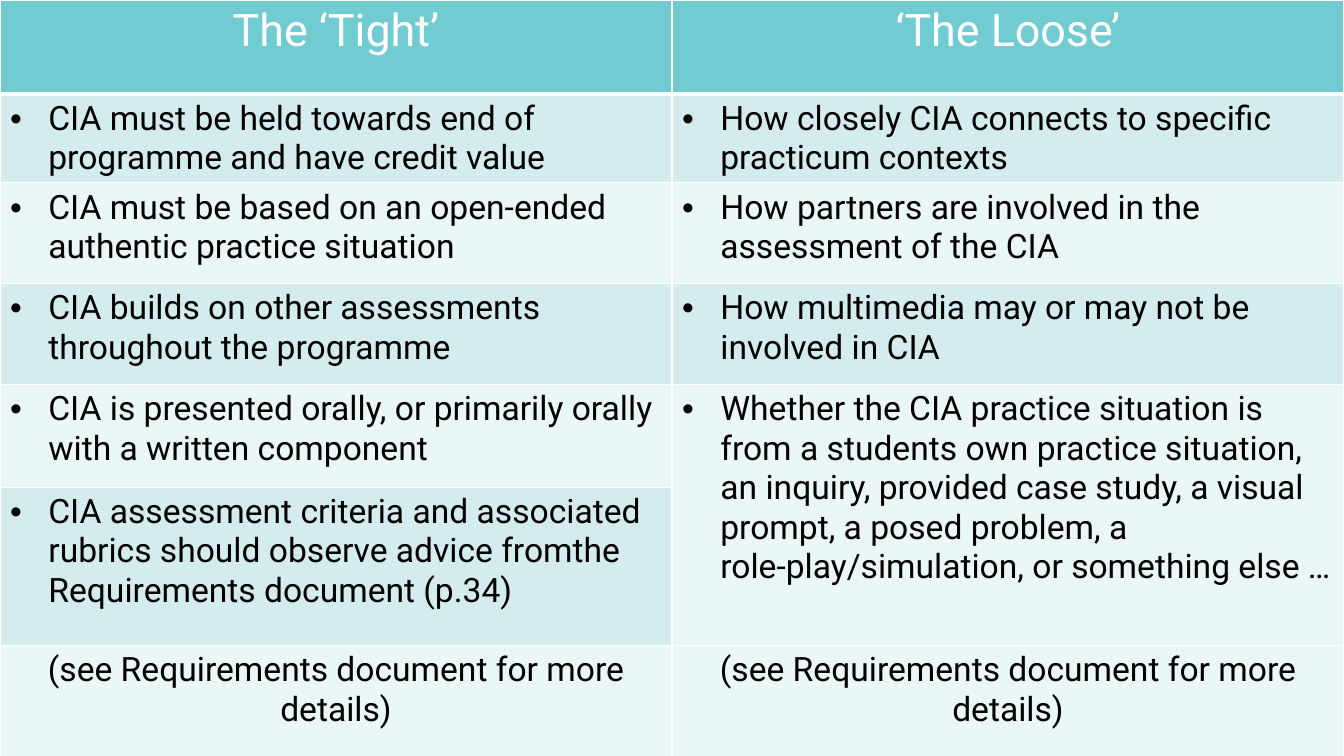
from lxml.etree import SubElement
from pptx import Presentation
from pptx.dml.color import RGBColor
from pptx.enum.text import PP_ALIGN
from pptx.oxml import parse_xml
from pptx.oxml.ns import nsdecls, qn
from pptx.util import Inches, Pt

WIDTH, HEIGHT = 13.33, 7.5
ROW_HEIGHTS = [0.93, 0.88, 1, 1, 1.02, 1.57, 1.44]
INDENT = Inches(0.38)
WHITE, BLACK, TEAL = "FFFFFF", "000000", "71CCD2"
BANDS = ["EBF6F7", "D5ECEE"]
SEE_MORE = "(see Requirements document for more details)"

ROWS = [
    ("The ‘Tight’", "‘The Loose’"),
    ("CIA must be held towards end of programme and have credit value",
     "How closely CIA connects to specific practicum contexts"),
    ("CIA must be based on an open-ended authentic practice situation",
     "How partners are involved in the assessment of the CIA"),
    ("CIA builds on other assessments throughout the programme",
     "How multimedia may or may not be involved in CIA"),
    ("CIA is presented orally, or primarily orally with a written component",
     "Whether the CIA practice situation is from a students own practice situation, "
     "an inquiry, provided case study, a visual prompt, a posed problem, a "
     "role-play/simulation, or something else …"),
    ("CIA assessment criteria and associated rubrics should observe advice fromthe "
     "Requirements document (p.34)", None),
    (SEE_MORE, SEE_MORE),
]
HEADER, LAST = 0, len(ROWS) - 1


def color(hex_string):
    return RGBColor.from_string(hex_string)


def add_bullet(para):
    properties = para._p.get_or_add_pPr()
    properties.set("marL", str(INDENT))
    properties.set("indent", str(-INDENT))
    SubElement(properties, qn("a:buFont"), typeface="Arial")
    SubElement(properties, qn("a:buChar"), char="•")


def set_borders(cell, bottom_width):
    properties = cell._tc.get_or_add_tcPr()
    widths = {"lnL": 1, "lnR": 1, "lnT": 1, "lnB": bottom_width}
    for position, (side, width) in enumerate(widths.items()):
        properties.insert(position, parse_xml(
            f'<a:{side} {nsdecls("a")} w="{Pt(width)}"><a:solidFill>'
            f'<a:srgbClr val="{WHITE}"/></a:solidFill></a:{side}>'))


def write_text(cell, text, row):
    para = cell.text_frame.paragraphs[0]
    para.add_run().text = text
    if row in (HEADER, LAST):
        para.alignment = PP_ALIGN.CENTER
    else:
        add_bullet(para)
    para.font.name = "Roboto"
    para.font.size = Pt(32 if row == HEADER else 24)
    para.font.color.rgb = color(WHITE if row == HEADER else BLACK)


def add_comparison(page):
    table = page.shapes.add_table(
        len(ROWS), 2, 0, 0, Inches(WIDTH), Inches(sum(ROW_HEIGHTS))).table
    table.first_row = table.horz_banding = False
    for table_row, height in zip(table.rows, ROW_HEIGHTS):
        table_row.height = Inches(height)
    table.cell(4, 1).merge(table.cell(5, 1))
    for row, texts in enumerate(ROWS):
        for column, text in enumerate(texts):
            cell = table.cell(row, column)
            cell.fill.solid()
            # The merged cell keeps the band of its first row.
            band = BANDS[0] if text is None else BANDS[row % 2]
            cell.fill.fore_color.rgb = color(TEAL if row == HEADER else band)
            set_borders(cell, 3 if row == HEADER else 1)
            if text:
                write_text(cell, text, row)


def main():
    deck = Presentation()
    deck.slide_width, deck.slide_height = Inches(WIDTH), Inches(HEIGHT)
    page = deck.slides.add_slide(deck.slide_layouts[6])
    add_comparison(page)
    deck.save("out.pptx")


if __name__ == "__main__":
    main()
